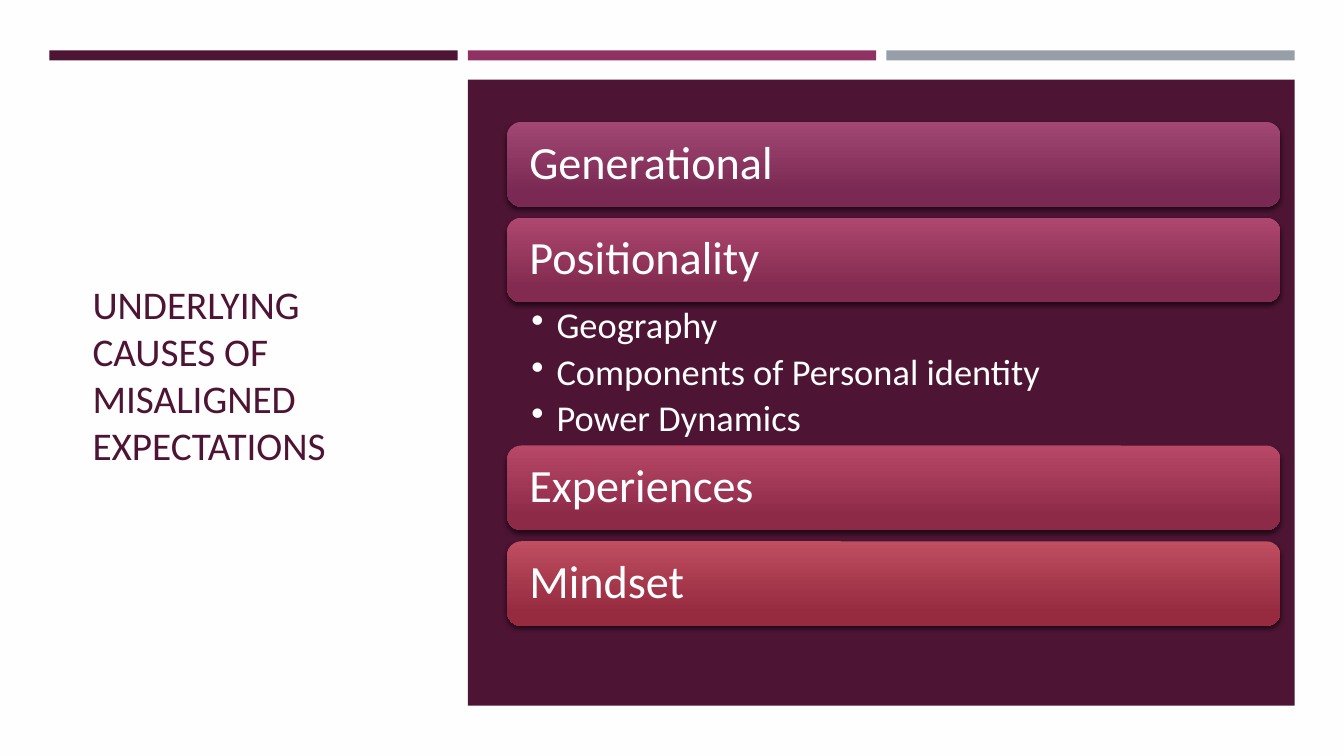
"""Build the slide on the underlying causes of misaligned expectations."""
from lxml import etree
from pptx import Presentation
from pptx import util as u
from pptx.dml.color import RGBColor
from pptx.enum import shapes, text
from pptx.oxml import parse_xml
from pptx.oxml.ns import nsdecls, qn

TITLE = "UNDERLYING CAUSES OF MISALIGNED EXPECTATIONS"
CAUSES = [
    ("Generational", ("A24774", "792953"), []),
    ("Positionality", ("AE476F", "822A4F"),
     ["Geography", "Components of Personal identity", "Power Dynamics"]),
    ("Experiences", ("B94867", "8C2A48"), []),
    ("Mindset", ("BF4E61", "962A3F"), []),
]
THEME = {
    "font": "Calibri", "paper": "FFFEFF", "plum": "4D1434", "white": "FFFFFF",
    "bars": ["4D1434", "903163", "969FA7"],
    "title": 28, "cause": 33, "detail": 26,
}
BAR_LEFT, BAR_TOP, BAR_WIDTH, BAR_HEIGHT, BAR_PITCH = 0.49, 0.5, 4.05, 0.1, 4.15
PANEL = (4.64, 0.79, 8.2, 6.21)
CAUSE_LEFT, CAUSE_TOP, CAUSE_WIDTH, CAUSE_HEIGHT = 5.03, 1.21, 7.67, 0.84
CAUSE_GAP, DETAIL_HEIGHT = 0.11, 1.42


def color(value):
    return RGBColor.from_string(value)


def add_block(slide, kind, box, fill=None):
    shape = slide.shapes.add_shape(kind, *map(u.Inches, box))
    shape.shadow.inherit = False
    shape.line.fill.background()
    if fill:
        shape.fill.solid()
        shape.fill.fore_color.rgb = color(fill)
    return shape


def write(shape, lines, size, ink, insets, anchor):
    frame = shape.text_frame
    frame.word_wrap = True
    frame.vertical_anchor = anchor
    (frame.margin_left, frame.margin_top,
     frame.margin_right, frame.margin_bottom) = map(u.Inches, insets)
    frame.text = "\n".join(lines)
    for paragraph in frame.paragraphs:
        paragraph.alignment = text.PP_ALIGN.LEFT
        paragraph.font.name = THEME["font"]
        paragraph.font.size = u.Pt(size)
        paragraph.font.color.rgb = color(ink)
    return frame.paragraphs


def add_cause(slide, top, name, stops):
    shape = add_block(slide, shapes.MSO_SHAPE.ROUNDED_RECTANGLE,
                      (CAUSE_LEFT, top, CAUSE_WIDTH, CAUSE_HEIGHT))
    shape.fill.gradient()
    shape.fill.gradient_angle = 270
    for stop, position, value in zip(shape.fill.gradient_stops, (0, 0.84), stops):
        stop.position = position
        stop.color.rgb = color(value)
    effects = shape._element.spPr.find(qn("a:effectLst"))
    effects.append(parse_xml(
        f'<a:outerShdw {nsdecls("a")} blurRad="{u.Pt(3)}" dist="{u.Pt(2)}" '
        'dir="5400000" rotWithShape="0"><a:srgbClr val="000000">'
        '<a:alpha val="55000"/></a:srgbClr></a:outerShdw>'))
    for paragraph in write(shape, [name], THEME["cause"], THEME["white"],
                           (0.18, 0.1, 0.18, 0.1), text.MSO_ANCHOR.MIDDLE):
        paragraph.line_spacing = 0.9


def add_details(slide, top, details):
    box = slide.shapes.add_textbox(
        *map(u.Inches, (CAUSE_LEFT, top, CAUSE_WIDTH, DETAIL_HEIGHT)))
    for paragraph in write(box, details, THEME["detail"], THEME["white"],
                           (0.24, 0.05, 0.26, 0.05), text.MSO_ANCHOR.TOP):
        paragraph.line_spacing = 0.9
        paragraph.space_after = u.Pt(5.2)
        properties = paragraph._p.get_or_add_pPr()
        properties.set("marL", str(u.Inches(0.25)))
        properties.set("indent", str(-u.Inches(0.25)))
        bullet = etree.Element(qn("a:buChar"), char="•")
        properties.insert_element_before(bullet, "a:tabLst", "a:defRPr", "a:extLst")


def main():
    presentation = Presentation()
    presentation.slide_width = u.Inches(13.33)
    presentation.slide_height = u.Inches(7.5)
    slide = presentation.slides.add_slide(presentation.slide_layouts[6])
    slide.background.fill.solid()
    slide.background.fill.fore_color.rgb = color(THEME["paper"])

    title = slide.shapes.add_textbox(*map(u.Inches, (0.82, 1.14, 3.34, 5.15)))
    write(title, [TITLE], THEME["title"], THEME["plum"],
          (0.1, 0.05, 0.1, 0.05), text.MSO_ANCHOR.MIDDLE)

    rectangle = shapes.MSO_SHAPE.RECTANGLE
    for column, fill in enumerate(THEME["bars"]):
        left = BAR_LEFT + column * BAR_PITCH
        add_block(slide, rectangle, (left, BAR_TOP, BAR_WIDTH, BAR_HEIGHT), fill)
    add_block(slide, rectangle, PANEL, THEME["plum"])

    top = CAUSE_TOP
    for name, stops, details in CAUSES:
        add_cause(slide, top, name, stops)
        top += CAUSE_HEIGHT
        if details:
            add_details(slide, top, details)
        top += DETAIL_HEIGHT if details else CAUSE_GAP

    presentation.save("out.pptx")


if __name__ == "__main__":
    main()
